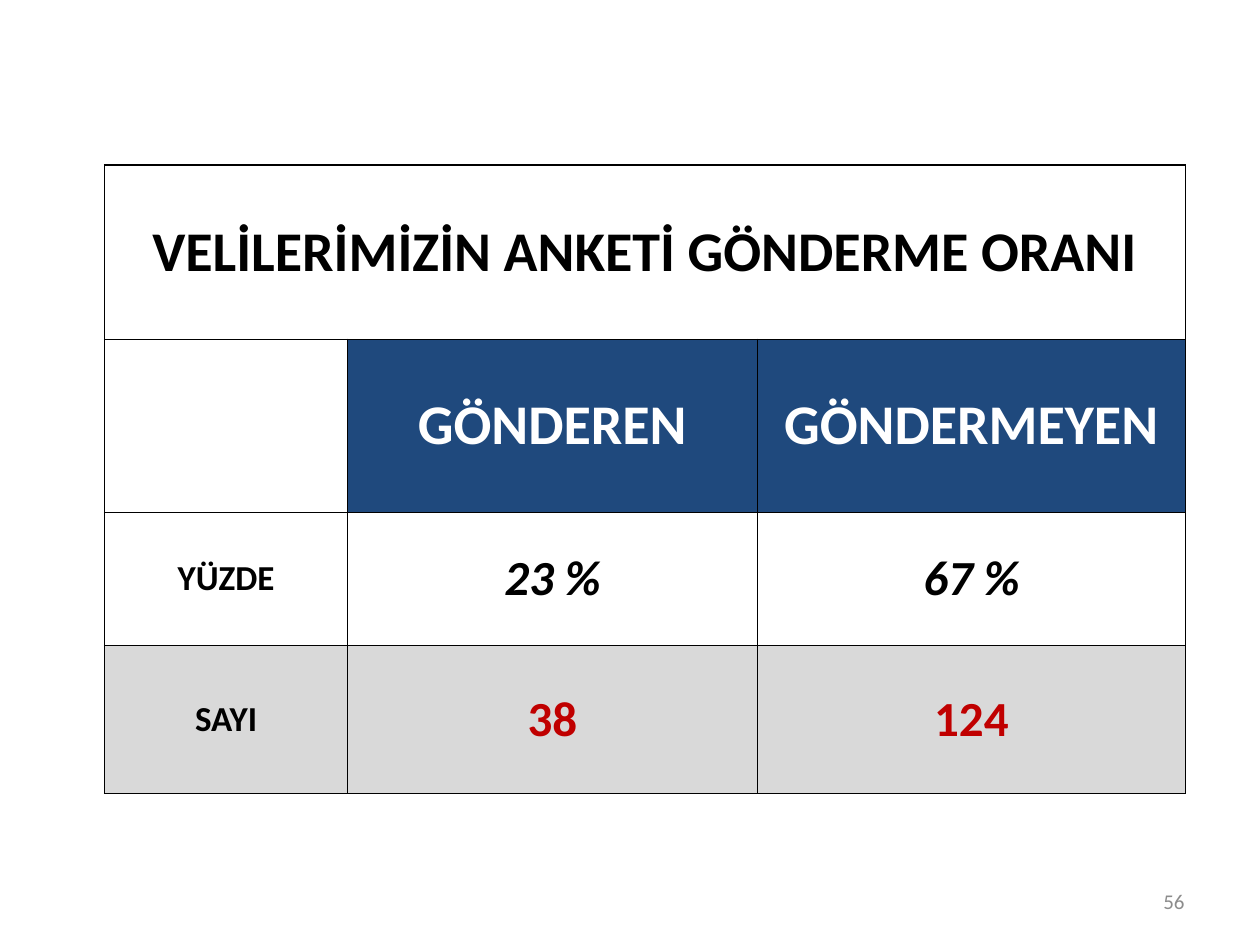
from lxml import etree
from pptx import Presentation, util as u
from pptx.dml.color import RGBColor
from pptx.enum import text
from pptx.oxml.ns import qn

BLACK = RGBColor(0x00, 0x00, 0x00)
WHITE = RGBColor(0xFF, 0xFF, 0xFF)
NAVY = RGBColor(0x1F, 0x49, 0x7D)
PALE_GRAY = RGBColor(0xD9, 0xD9, 0xD9)
RED = RGBColor(0xC0, 0x00, 0x00)
NUMBER_GRAY = RGBColor(0x8C, 0x8C, 0x8C)

FONT = "Calibri"
WIDTH, HEIGHT = u.Inches(10), u.Inches(7.5)
COLUMN_WIDTHS = (1.93, 3.25, 3.4)
ROW_HEIGHTS = (1.38, 1.38, 1.05, 1.18)
THIN, THICK = 0.5, 1

# Each row: background of the label cell, background of the value cells, texts
TITLE = "VELİLERİMİZİN ANKETİ GÖNDERME ORANI"
ROWS = (
    (WHITE, WHITE, (TITLE, "", "")),
    (WHITE, NAVY, ("", "GÖNDEREN", "GÖNDERMEYEN")),
    (WHITE, WHITE, ("YÜZDE", "23 %", "67 %")),
    (PALE_GRAY, PALE_GRAY, ("SAYI", "38", "124")),
)
# Each row: size of the label, size, colour and italic of the values
STYLES = (
    (32, 32, BLACK, False),
    (32, 32, WHITE, False),
    (20, 28, BLACK, True),
    (20, 28, RED, False),
)


def add_run(paragraph, words, size, color, bold=False, italic=False):
    run = paragraph.add_run()
    run.text = words
    font = run.font
    font.name, font.size = FONT, u.Pt(size)
    font.bold, font.italic = bold, italic
    font.color.rgb = color


def set_borders(cell, widths):
    """Draw black borders; widths are points for left, right, top, bottom."""
    properties = cell._tc.get_or_add_tcPr()
    for side, width in zip("LRTB", widths):
        line = etree.SubElement(properties, qn(f"a:ln{side}"), w=str(u.Pt(width)))
        fill = etree.SubElement(line, qn("a:solidFill"))
        etree.SubElement(fill, qn("a:srgbClr"), val=str(BLACK))


def add_survey_table(slide, left, top, width, height):
    row_count, column_count = len(ROWS), len(COLUMN_WIDTHS)
    table = slide.shapes.add_table(
        row_count, column_count, left, top, width, height).table
    table.first_row = table.horz_banding = False
    for column, share in zip(table.columns, COLUMN_WIDTHS):
        column.width = int(width * share / sum(COLUMN_WIDTHS))
    for row, share in zip(table.rows, ROW_HEIGHTS):
        row.height = int(height * share / sum(ROW_HEIGHTS))
    table.cell(0, 0).merge(table.cell(0, column_count - 1))

    for r, ((label_fill, value_fill, words), style) in enumerate(zip(ROWS, STYLES)):
        label_size, value_size, value_color, italic = style
        for c, word in enumerate(words):
            is_label = c == 0
            cell = table.cell(r, c)
            cell.margin_left = cell.margin_right = 0
            cell.margin_top = cell.margin_bottom = 0
            cell.vertical_anchor = text.MSO_ANCHOR.MIDDLE
            # Thick outer edge on the left, top and bottom
            set_borders(cell, (
                THICK if is_label else THIN,
                THIN,
                THICK if r == 0 else THIN,
                THICK if r == row_count - 1 else THIN))
            cell.fill.solid()
            cell.fill.fore_color.rgb = label_fill if is_label else value_fill
            if word:
                paragraph = cell.text_frame.paragraphs[0]
                paragraph.alignment = text.PP_ALIGN.CENTER
                add_run(paragraph, word,
                        label_size if is_label else value_size,
                        BLACK if is_label else value_color,
                        bold=True, italic=italic and not is_label)


def add_slide_number(slide, left, top, width, height, number):
    frame = slide.shapes.add_textbox(left, top, width, height).text_frame
    frame.word_wrap = True
    frame.vertical_anchor = text.MSO_ANCHOR.MIDDLE
    paragraph = frame.paragraphs[0]
    paragraph.alignment = text.PP_ALIGN.RIGHT
    add_run(paragraph, number, 12, NUMBER_GRAY)


def main():
    presentation = Presentation()
    presentation.slide_width, presentation.slide_height = WIDTH, HEIGHT
    slide = presentation.slides.add_slide(presentation.slide_layouts[6])

    # Survey results
    add_survey_table(slide, u.Inches(0.83), u.Inches(1.31),
                     u.Inches(sum(COLUMN_WIDTHS)), u.Inches(sum(ROW_HEIGHTS)))
    # Page number
    add_slide_number(slide, u.Inches(7.17), u.Inches(6.95),
                     u.Inches(2.33), u.Inches(0.4), "56")
    presentation.save("out.pptx")


if __name__ == "__main__":
    main()
